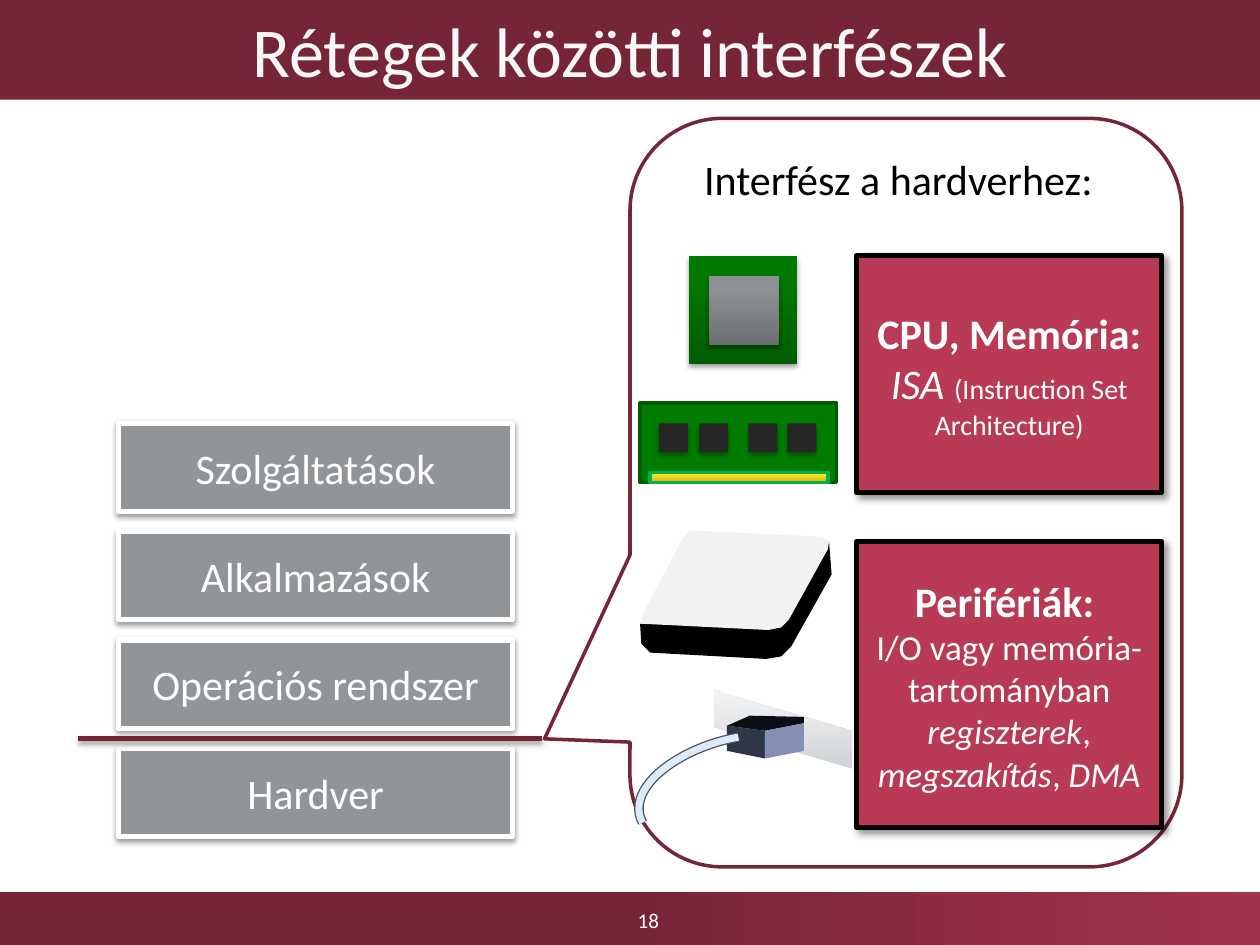
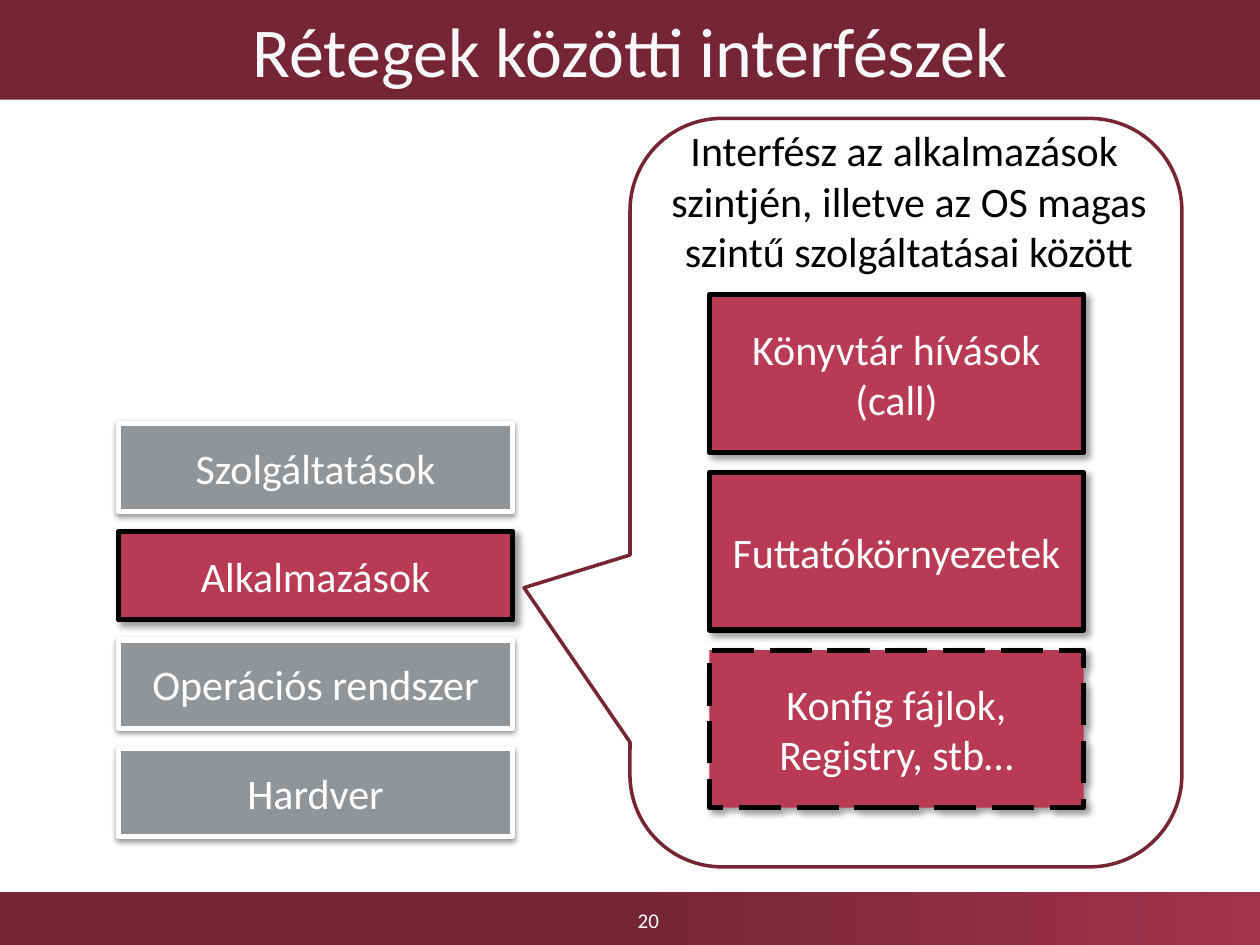
from lxml.etree import SubElement
from pptx import Presentation
from pptx.dml.color import RGBColor
from pptx.enum.dml import MSO_LINE
from pptx.enum.shapes import MSO_CONNECTOR, MSO_SHAPE
from pptx.enum.text import MSO_ANCHOR, MSO_AUTO_SIZE, PP_ALIGN
from pptx.oxml.ns import qn
from pptx.util import Inches, Pt

FONT = "Calibri"
WINE, CRIMSON, GREY = "762536", "B83A55", "929598"
WHITE, BLACK = "FFFFFF", "000000"
LAYER_SHADOW = (38, 3.1, 1.6, 90)
PART_SHADOW = (35, 3.1, 1.8, 90)
BOX_SHADOW = (40, 4, 3, 45)


def paint(shape, fill=None, line=None, width=0, shadow=None):
    if isinstance(fill, tuple):
        start, end, angle, start_at, end_at = fill
        shape.fill.gradient()
        shape.fill.gradient_angle = angle
        stops = shape.fill.gradient_stops
        for stop, color, position in zip(stops, (start, end), (start_at, end_at)):
            stop.color.rgb = RGBColor.from_string(color)
            stop.position = position
    elif fill:
        shape.fill.solid()
        shape.fill.fore_color.rgb = RGBColor.from_string(fill)
    elif hasattr(shape, "fill"):
        shape.fill.background()
    if line:
        shape.line.color.rgb = RGBColor.from_string(line)
        shape.line.width = Pt(width)
    else:
        shape.line.fill.background()
    effects = SubElement(shape.element.spPr, qn("a:effectLst"))
    if shadow:
        alpha, blur, distance, angle = shadow
        outer = SubElement(effects, qn("a:outerShdw"), blurRad=str(Pt(blur)),
                           dist=str(Pt(distance)), dir=str(angle * 60000), rotWithShape="0")
        black = SubElement(outer, qn("a:srgbClr"), val=BLACK)
        SubElement(black, qn("a:alpha"), val=str(alpha * 1000))


def write(shape, paragraphs, color=WHITE, wrap=True, anchor=MSO_ANCHOR.MIDDLE):
    frame = shape.text_frame
    frame.word_wrap = wrap
    frame.vertical_anchor = anchor
    frame.auto_size = MSO_AUTO_SIZE.NONE
    for index, runs in enumerate(paragraphs):
        paragraph = frame.add_paragraph() if index else frame.paragraphs[0]
        paragraph.alignment = PP_ALIGN.CENTER
        for text, size, style in runs:
            for number, part in enumerate(text.split("\n")):
                if number:
                    paragraph.add_line_break()
                if part:
                    run = paragraph.add_run()
                    run.text = part
                    run.font.name = FONT
                    run.font.size = Pt(size)
                    run.font.bold = "b" in style
                    run.font.italic = "i" in style
                    run.font.color.rgb = RGBColor.from_string(color)


prs = Presentation()
prs.slide_width, prs.slide_height = Inches(10), Inches(7.5)
title_only = prs.slide_layouts[5]

layers = ["Szolgáltatások", "Alkalmazások", "Operációs rendszer", "Hardver"]
pages = [
    ("18", None, (-0.655, 0.329), "Interfész a hardverhez:", (5.47, 1.17, 3.32, 0.5)),
    ("20", "Alkalmazások", (-0.692, 0.127),
     "Interfész az alkalmazások \nszintjén, illetve az OS magas\nszintű szolgáltatásai között",
     (5.16, 0.94, 4.11, 1.31)),
]
slides = []
for number, active_layer, pointer, heading, heading_at in pages:
    slide = prs.slides.add_slide(title_only)
    shapes = slide.shapes
    if not slides:
        band = shapes.add_shape(MSO_SHAPE.RECTANGLE, 0, Inches(7.08), Inches(10), Inches(0.42))
        paint(band, (WINE, "A3334B", 0, 0.5, 1))
        prs.slide_master.shapes.element.insert(2, band.element)
    slides.append(slide)

    title = shapes.title
    title.left, title.top, title.width, title.height = 0, 0, Inches(10), Inches(0.79)
    paint(title, WINE)
    write(title, [[("Rétegek közötti interfészek", 40, "")]], "F8F8F8")

    for index, layer in enumerate(layers):
        layer_box = shapes.add_shape(MSO_SHAPE.RECTANGLE, Inches(0.94), Inches(3.36 + 0.86 * index),
                                     Inches(3.13), Inches(0.7))
        if layer == active_layer:
            paint(layer_box, CRIMSON, BLACK, 3, BOX_SHADOW)
        else:
            paint(layer_box, GREY, WHITE, 3, LAYER_SHADOW)
        write(layer_box, [[(layer, 24, "")]])

    callout = shapes.add_shape(MSO_SHAPE.ROUNDED_RECTANGULAR_CALLOUT, Inches(5), Inches(0.94),
                               Inches(4.38), Inches(5.94))
    for index, value in enumerate((*pointer, 0.167)):
        callout.adjustments[index] = value
    paint(callout, WHITE, WINE, 2)

    interface = shapes.add_textbox(*map(Inches, heading_at))
    write(interface, [[(heading, 24, "")]], BLACK, False, MSO_ANCHOR.TOP)
    page_number = shapes.add_textbox(Inches(3.52), Inches(7.11), Inches(3.25), Inches(0.39))
    write(page_number, [[(number, 12, "")]])

hardware, applications = (slide.shapes for slide in slides)

boundary = hardware.add_connector(MSO_CONNECTOR.STRAIGHT, Inches(0.62), Inches(5.86),
                                  Inches(4.3), Inches(5.86))
paint(boundary, None, WINE, 3, PART_SHADOW)

parts = [
    ((5.47, 2.03, 0.86, 0.86), ("005D00", "007900", 90, 0, 0.8), None, 0, PART_SHADOW),
    ((5.63, 2.19, 0.55, 0.55), ("6C6F72", "8D9094", 90, 0, 0.8), None, 0, PART_SHADOW),
    ((5.08, 3.2, 1.56, 0.63), "007D00", "005C00", 2, None),
    ((5.16, 3.75, 1.41, 0.08), ("D0B50C", "FFE020", 90, 0, 0.8), "00B050", 2.25, None),
]
for chip_left in (5.23, 5.55, 5.94, 6.25):
    parts.append(((chip_left, 3.36, 0.23, 0.23), "262626", None, 0, PART_SHADOW))
for place, fill, line, width, shadow in parts:
    part = hardware.add_shape(MSO_SHAPE.RECTANGLE, *map(Inches, place))
    paint(part, fill, line, width, shadow)

disk_side = [(5.08, 4.95), (5.09, 5.11), (5.16, 5.18), (6.08, 5.23), (6.2, 5.21),
             (6.28, 5.13), (6.6, 4.56), (6.58, 4.3), (6.1, 4.9)]
disk_top = [(5.48, 4.21), (6.53, 4.26), (6.58, 4.3), (6.57, 4.36), (6.26, 4.92),
            (6.2, 4.98), (6.1, 5), (5.08, 4.95), (5.1, 4.88), (5.42, 4.27)]
wall = [(5.67, 5.48), (6.76, 5.8), (6.76, 6.1), (5.67, 5.77)]
plug_top = [(5.77, 5.76), (5.95, 5.68), (6.38, 5.69), (6.38, 5.74), (6.07, 5.8)]
plug_side = [(5.77, 5.76), (6.07, 5.8), (6.07, 6.02), (5.77, 5.96)]
plug_front = [(6.07, 5.8), (6.38, 5.74), (6.38, 5.96), (6.07, 6.02)]
faces = [
    (disk_side, BLACK), (disk_top, "F2F2F2"),
    (wall, ("D0D3D6", "F2F3F4", 90, 0, 1)),
    (plug_top, "0B0E14"), (plug_side, "2F3648"), (plug_front, "838FB5"),
]
for corners, fill in faces:
    points = [(Inches(x), Inches(y)) for x, y in corners]
    outline = hardware.build_freeform(*points[0])
    outline.add_line_segments(points[1:])
    paint(outline.convert_to_shape(), fill)

cable_bends = [(5.86, 5.85), (5.4, 5.93), (4.95, 6.25), (5.1, 6.53)]
cable = []
for step in range(25):
    t = step / 24
    weights = ((1 - t) ** 3, 3 * t * (1 - t) ** 2, 3 * t * t * (1 - t), t ** 3)
    cable.append(tuple(Inches(sum(w * bend[axis] for w, bend in zip(weights, cable_bends)))
                       for axis in (0, 1)))
for color, width in (("4A5468", 5.5), ("DCEBF7", 4)):
    strand = hardware.build_freeform(*cable[0])
    strand.add_line_segments(cable[1:], close=False)
    paint(strand.convert_to_shape(), None, color, width)

hardware_interfaces = [
    (2.03, 1.88, [("CPU, Memória: ", 24, "b"), ("ISA ", 24, "i"),
                  ("(Instruction Set Architecture)", 16, "")]),
    (4.3, 2.27, [("Perifériák: \n", 24, "b"), ("I/O vagy memória-tartományban ", 20, ""),
                 ("regiszterek", 20, "i"), (", ", 20, ""), ("megszakítás", 20, "i"),
                 (", ", 20, ""), ("DMA", 20, "i")]),
]
for top, height, runs in hardware_interfaces:
    interface_box = hardware.add_shape(MSO_SHAPE.RECTANGLE, Inches(6.8), Inches(top),
                                       Inches(2.42), Inches(height))
    paint(interface_box, CRIMSON, BLACK, 3, BOX_SHADOW)
    write(interface_box, [runs])

application_interfaces = [
    ["Könyvtár hívások", "(call)"],
    ["Futtatókörnyezetek"],
    ["Konfig fájlok, Registry, stb…"],
]
for index, lines in enumerate(application_interfaces):
    interface_box = applications.add_shape(MSO_SHAPE.RECTANGLE, Inches(5.63),
                                           Inches(2.34 + 1.41 * index), Inches(2.97), Inches(1.25))
    paint(interface_box, CRIMSON, BLACK, 3, BOX_SHADOW)
    write(interface_box, [[(line, 24, "")] for line in lines])
interface_box.line.dash_style = MSO_LINE.LONG_DASH

prs.save("out.pptx")
